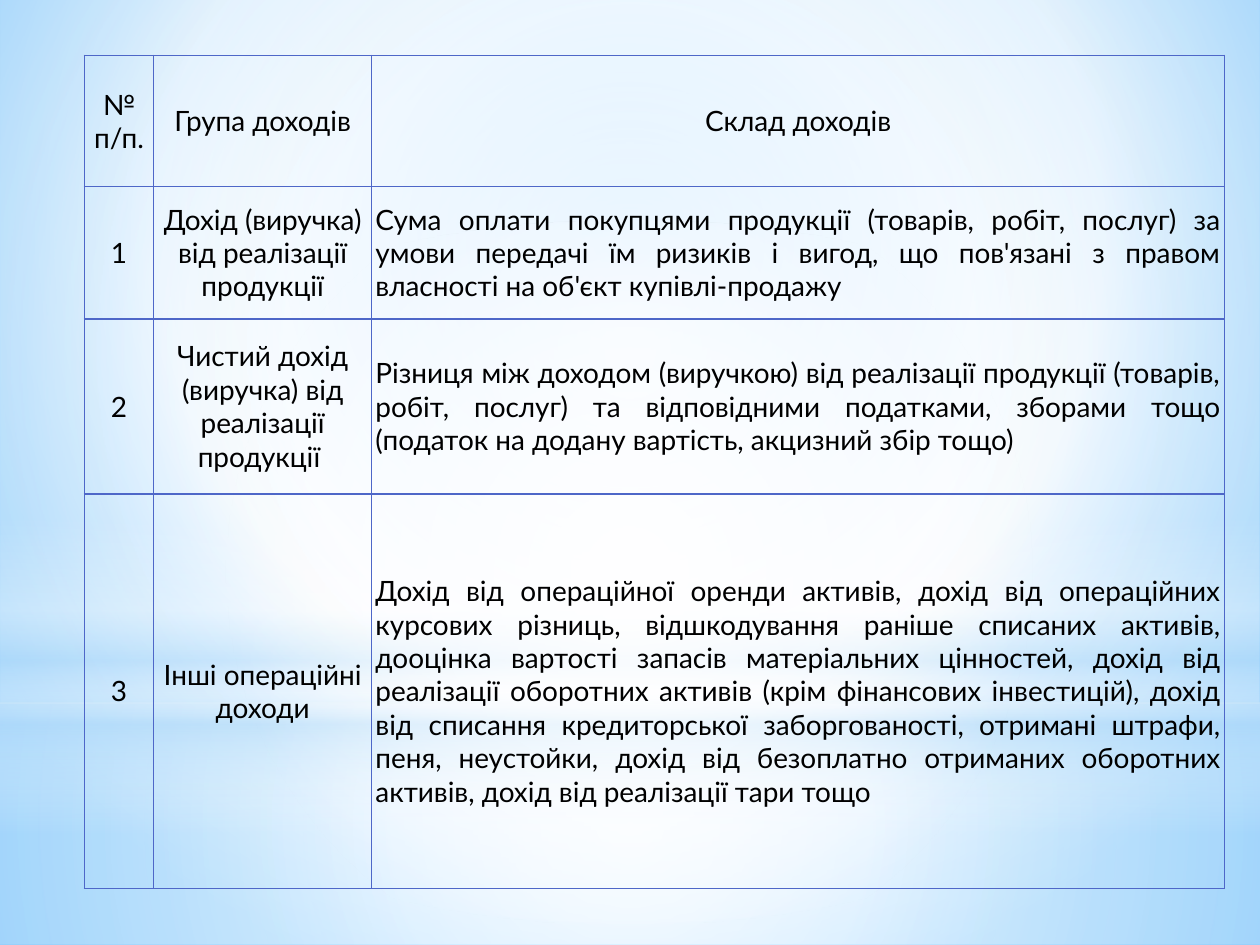
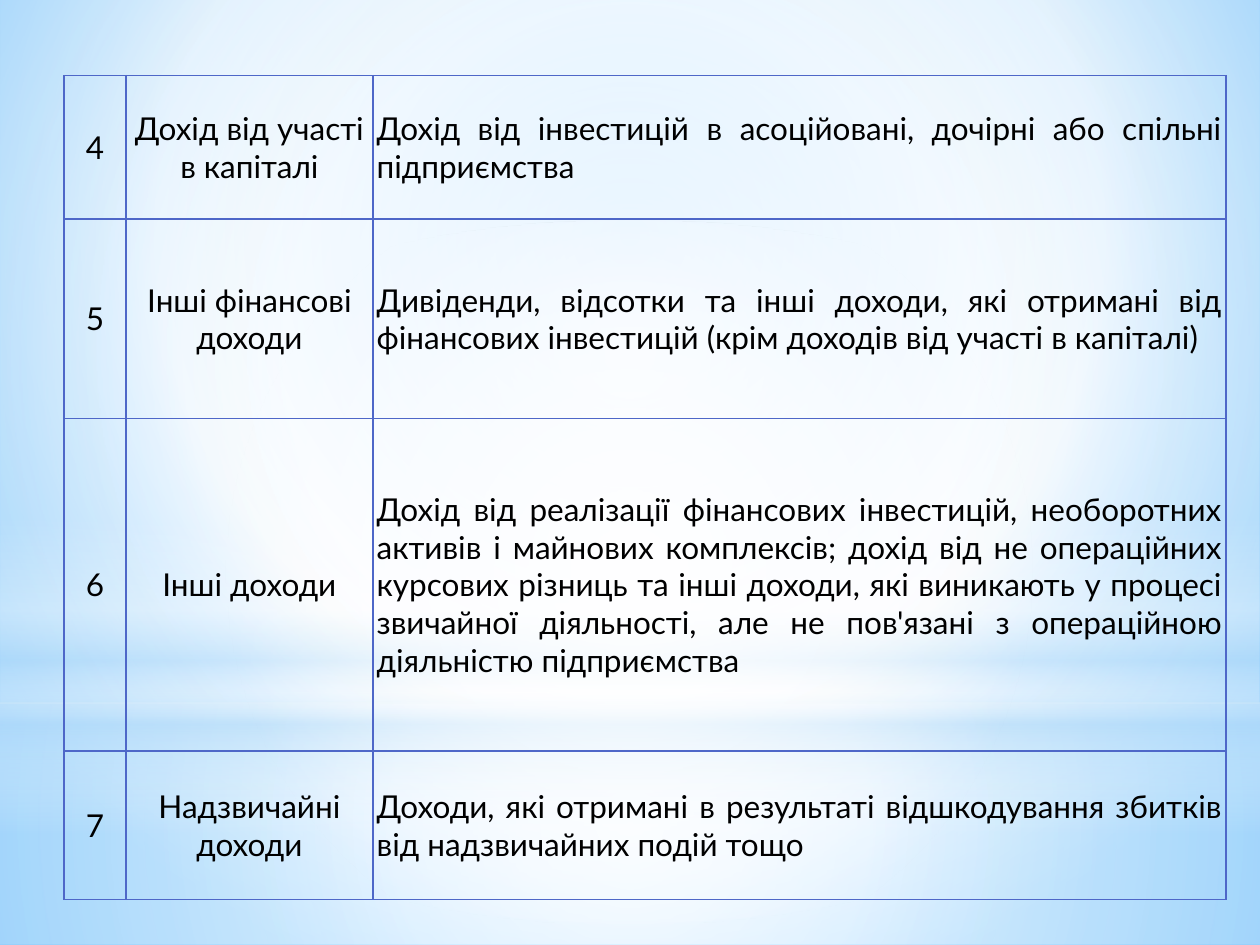
from dataclasses import dataclass

from lxml import etree
from pptx import Presentation
from pptx.dml.color import RGBColor
from pptx.enum.shapes import MSO_SHAPE
from pptx.enum.text import MSO_ANCHOR, PP_ALIGN
from pptx.oxml.ns import qn
from pptx.util import Inches, Pt

RECT, OVAL = MSO_SHAPE.RECTANGLE, MSO_SHAPE.OVAL
CENTER, JUSTIFY = PP_ALIGN.CENTER, PP_ALIGN.JUSTIFY
MIDDLE = MSO_ANCHOR.MIDDLE

# The grid cuts the slide into equal columns and rows
GRID_COLS, GRID_ROWS = 100, 75
MIDPOINT = (50, 50, 50, 50)


@dataclass(frozen=True)
class Theme:
    font: str = "Lato"
    text: str = "000000"
    border: str = "4E67C8"
    white: str = "FFFFFF"
    haze: str = "B4DCFA"
    sky: str = "9ED5FF"
    deep_sky: str = "5BB9FF"
    border_width: float = 1
    normal: float = 16
    large: float = 18


THEME = Theme()

# Gradient stops: position, colour, opacity (all in percent)
SKY = [(0, THEME.sky, 100), (60, THEME.white, 100), (100, THEME.deep_sky, 100)]
GROUND = [(0, THEME.white, 91), (37, THEME.white, 76), (100, THEME.haze, 79)]
AIR = [(0, THEME.white, 89), (48, THEME.white, 62), (100, THEME.haze, 79)]
HORIZON = [(0, THEME.white, 0), (29, THEME.white, 30), (45, THEME.haze, 40),
           (55, THEME.white, 26), (65, THEME.haze, 60), (100, THEME.white, 0)]
GLOW = [(0, THEME.white, 100), (56, THEME.white, 0)]

# Backdrop layers: shape, (column, row, columns, rows), stops, gradient focus
BACKDROP = [
    (RECT, (0, 55.8, 100, 19.2), GROUND, MIDPOINT),
    (RECT, (0, 0, 100, 55.8), AIR, MIDPOINT),
    (RECT, (0, 41.2, 100, 25), HORIZON, None),
    (OVAL, (0, 17.5, 100, 55.8), GLOW, MIDPOINT),
]


def add_xml(parent, tag, **attrs):
    return etree.SubElement(parent, qn(tag), {k: str(v) for k, v in attrs.items()})


def add_color(parent, color, opacity=100):
    clr = add_xml(parent, "a:srgbClr", val=color)
    if opacity < 100:
        add_xml(clr, "a:alpha", val=opacity * 1000)


def set_all(obj, values):
    for name, value in values.items():
        setattr(obj, name, value)


class Deck:
    def __init__(self, theme):
        self.theme = theme
        self.prs = Presentation()
        self.prs.slide_width, self.prs.slide_height = Inches(10), Inches(7.5)
        self.s = None

    def x(self, cols):
        return round(self.prs.slide_width * cols / GRID_COLS)

    def y(self, rows):
        return round(self.prs.slide_height * rows / GRID_ROWS)

    def gradient(self, owner, fill, stops, focus):
        """Fill with a circular gradient, or a vertical one without a focus."""
        fill.gradient()
        grad = owner.element.find(".//" + qn("a:gradFill"))
        for child in list(grad):
            grad.remove(child)
        gs_list = add_xml(grad, "a:gsLst")
        for pos, color, opacity in stops:
            add_color(add_xml(gs_list, "a:gs", pos=pos * 1000), color, opacity)
        if focus:
            circle = add_xml(grad, "a:path", path="circle")
            sides = {side: share * 1000 for side, share in zip("ltrb", focus)}
            add_xml(circle, "a:fillToRect", **sides)
        else:
            add_xml(grad, "a:lin", ang=90 * 60000, scaled=0)

    def layer(self, kind, box, stops, focus):
        left, top, width, height = box
        sp = self.s.shapes.add_shape(
            kind, self.x(left), self.y(top), self.x(width), self.y(height))
        sp.shadow.inherit = False
        sp.line.fill.background()
        self.gradient(sp, sp.fill, stops, focus)

    def slide(self):
        self.s = self.prs.slides.add_slide(self.prs.slide_layouts[6])
        self.gradient(self.s, self.s.background.fill, SKY, (20, 10, 20, 60))
        for layer in BACKDROP:
            self.layer(*layer)

    def cell(self, cell, text, size, align):
        side = Inches(0.03)
        set_all(cell, dict(text=text, vertical_anchor=MIDDLE, margin_left=side,
                           margin_right=side, margin_top=0, margin_bottom=0))
        p = cell.text_frame.paragraphs[0]
        p.alignment = align
        font = p.runs[0].font
        set_all(font, dict(name=self.theme.font, size=Pt(size), bold=False))
        font.color.rgb = RGBColor.from_string(self.theme.text)
        # Borders come before the fill in the cell properties
        tc_pr = cell._tc.get_or_add_tcPr()
        for edge in "LRTB":
            ln = add_xml(tc_pr, f"a:ln{edge}", w=Pt(self.theme.border_width))
            add_color(add_xml(ln, "a:solidFill"), self.theme.border)
        cell.fill.background()

    def table(self, left, top, cols, rows, data, size, header=False):
        table = self.s.shapes.add_table(
            len(rows), len(cols), self.x(left), self.y(top),
            self.x(sum(cols)), self.y(sum(rows))).table
        set_all(table, dict(first_row=False, horz_banding=False))
        for column, width in zip(table.columns, cols):
            column.width = self.x(width)
        for row, height in zip(table.rows, rows):
            row.height = self.y(height)
        for i, texts in enumerate(data):
            for j, text in enumerate(texts):
                is_description = j == len(cols) - 1 and not (header and i == 0)
                self.cell(table.cell(i, j), text, size,
                          JUSTIFY if is_description else CENTER)


OPERATING_INCOME = [
    ("№ п/п.", "Група доходів", "Склад доходів"),
    ("1", "Дохід (виручка) від реалізації продукції",
     "Сума оплати покупцями продукції (товарів, робіт, послуг) за умови "
     "передачі їм ризиків і вигод, що пов'язані з правом власності на об'єкт "
     "купівлі-продажу"),
    ("2", "Чистий дохід (виручка) від реалізації продукції ",
     "Різниця між доходом (виручкою) від реалізації продукції (товарів, робіт, "
     "послуг) та відповідними податками, зборами тощо (податок на додану "
     "вартість, акцизний збір тощо)"),
    ("3", "Інші операційні доходи",
     "Дохід від операційної оренди активів, дохід від операційних курсових "
     "різниць, відшкодування раніше списаних активів, дооцінка вартості запасів "
     "матеріальних цінностей, дохід від реалізації оборотних активів (крім "
     "фінансових інвестицій), дохід від списання кредиторської заборгованості, "
     "отримані штрафи, пеня, неустойки, дохід від безоплатно отриманих "
     "оборотних активів, дохід від реалізації тари тощо"),
]

OTHER_INCOME = [
    ("4", "Дохід від участі в капіталі",
     "Дохід від інвестицій в асоційовані, дочірні або спільні підприємства"),
    ("5", "Інші фінансові доходи",
     "Дивіденди, відсотки та інші доходи, які отримані від фінансових "
     "інвестицій (крім доходів від участі в капіталі)"),
    ("6", "Інші доходи",
     "Дохід від реалізації фінансових інвестицій, необоротних активів і "
     "майнових комплексів; дохід від не операційних курсових різниць та інші "
     "доходи, які виникають у процесі звичайної діяльності, але не пов'язані з "
     "операційною діяльністю підприємства"),
    ("7", "Надзвичайні доходи",
     "Доходи, які отримані в результаті відшкодування збитків від надзвичайних "
     "подій тощо"),
]


def main():
    deck = Deck(THEME)

    # Operating income, with the header row
    deck.slide()
    deck.table(6.7, 4.4, (5.5, 17.3, 67.7), (10.4, 10.5, 13.9, 31.3),
               OPERATING_INCOME, THEME.normal, header=True)

    # Financial and other income
    deck.slide()
    deck.table(5.1, 6, (4.9, 19.6, 67.7), (11.4, 15.8, 26.4, 11.8),
               OTHER_INCOME, THEME.large)

    deck.prs.save("out.pptx")


if __name__ == "__main__":
    main()
